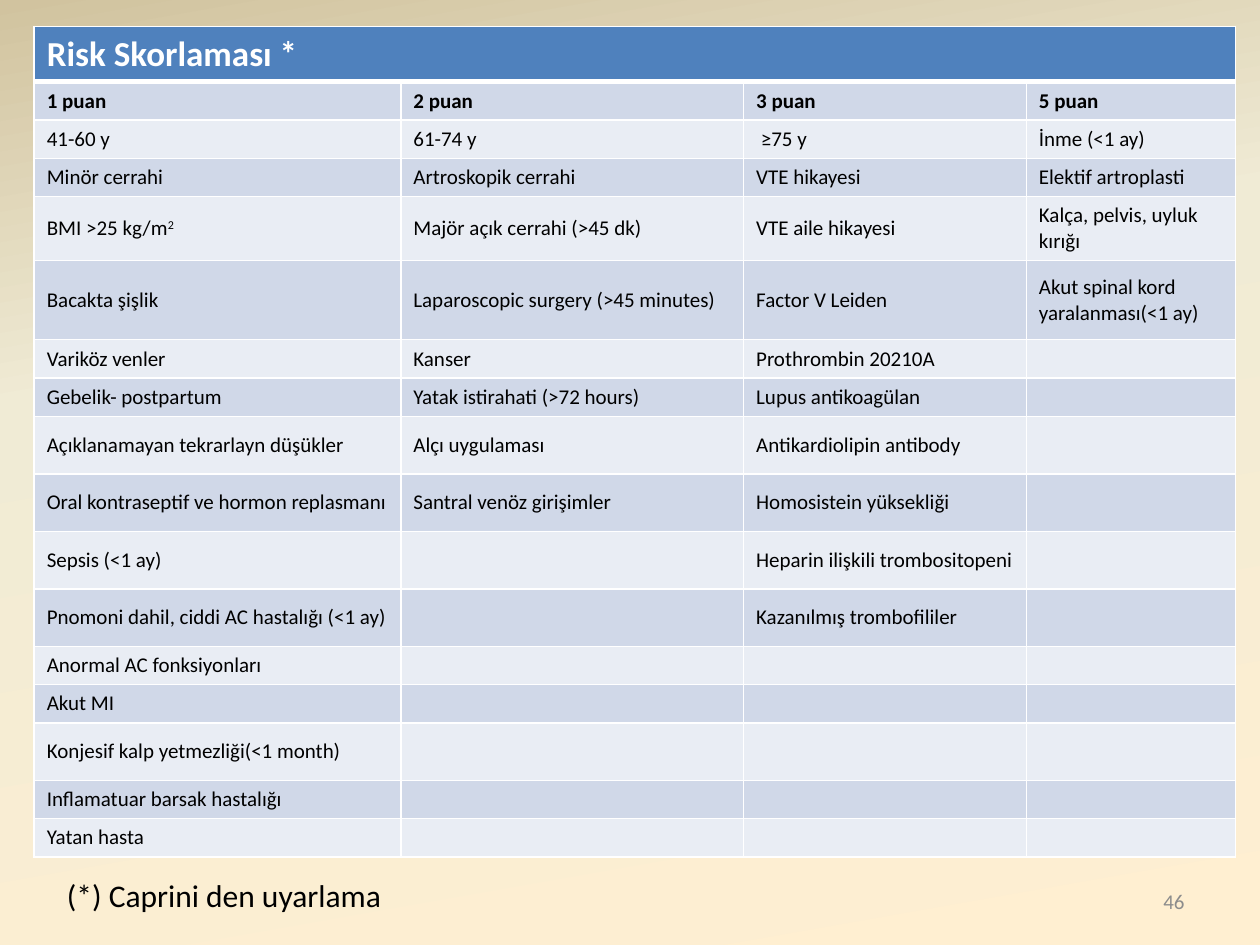
from copy import deepcopy

from lxml.etree import SubElement
from pptx import Presentation
from pptx.dml.color import RGBColor
from pptx.enum.text import MSO_ANCHOR as Anchor, PP_ALIGN as Align
from pptx.oxml.ns import qn
from pptx.util import Cm, Pt

FONT = "Calibri"
WHITE = RGBColor(0xFF, 0xFF, 0xFF)
BLACK = RGBColor(0, 0, 0)
GREY = RGBColor(0x8C, 0x8C, 0x8C)
HEADER_BLUE = RGBColor(0x4F, 0x81, 0xBD)
BANDS = (RGBColor(0xD0, 0xD8, 0xE8), RGBColor(0xE9, 0xED, 0xF4))
SAND = (
    (0, RGBColor(0xFF, 0xEF, 0xD1)),
    (0.65, RGBColor(0xF0, 0xEB, 0xD5)),
    (1, RGBColor(0xD1, 0xC3, 0x9F)),
)

TITLE = "Risk Skorlaması *"
COLUMN_WIDTHS = (7.39, 6.91, 5.7, 4.22)
LOW, MIDDLE, TALL = 0.71, 1.16, 1.6
# Row height in cm, then the cells that hold text; "^" starts a superscript.
ROWS = (
    (LOW, "1 puan", "2 puan", "3 puan", "5 puan"),
    (LOW, "41-60 y", "61-74 y", " ≥75 y", "İnme (<1 ay)"),
    (LOW, "Minör cerrahi", "Artroskopik cerrahi", "VTE hikayesi",
     "Elektif artroplasti"),
    (MIDDLE, "BMI >25 kg/m^2", "Majör açık cerrahi (>45 dk)",
     "VTE aile hikayesi", "Kalça, pelvis, uyluk kırığı"),
    (TALL, "Bacakta şişlik", "Laparoscopic surgery (>45 minutes)",
     "Factor V Leiden", "Akut spinal kord yaralanması(<1 ay)"),
    (LOW, "Variköz venler", "Kanser", "Prothrombin 20210A"),
    (LOW, "Gebelik- postpartum", "Yatak istirahati (>72 hours)",
     "Lupus antikoagülan"),
    (MIDDLE, "Açıklanamayan tekrarlayn düşükler", "Alçı uygulaması",
     "Antikardiolipin antibody"),
    (MIDDLE, "Oral kontraseptif ve hormon replasmanı",
     "Santral venöz girişimler", "Homosistein yüksekliği"),
    (MIDDLE, "Sepsis (<1 ay)", "", "Heparin ilişkili trombositopeni"),
    (MIDDLE, "Pnomoni dahil, ciddi AC hastalığı (<1 ay)", "",
     "Kazanılmış trombofililer"),
    (LOW, "Anormal AC fonksiyonları"),
    (LOW, "Akut MI"),
    (MIDDLE, "Konjesif kalp yetmezliği(<1 month)"),
    (LOW, "Inflamatuar barsak hastalığı"),
    (LOW, "Yatan hasta"),
)


def paint_background(page):
    fill = page.background.fill
    fill.gradient()
    fill.gradient_angle = 100
    stop_list = page.background._cSld.find(".//" + qn("a:gsLst"))
    stop_list.append(deepcopy(stop_list[0]))
    for stop, (position, color) in zip(fill.gradient_stops, SAND):
        stop.position = position
        stop.color.rgb = color


def add_span(para, text, size, color, bold=False):
    span = para.add_run()
    span.text = text
    font = span.font
    font.name, font.size, font.bold = FONT, Pt(size), bold
    font.color.rgb = color
    return span


def add_border(cell, side, width):
    line = SubElement(cell._tc.get_or_add_tcPr(), qn("a:ln" + side),
                      w=str(Pt(width)))
    color = SubElement(SubElement(line, qn("a:solidFill")), qn("a:srgbClr"))
    color.set("val", str(WHITE))


def style_cell(cell, fill_color, top=1, bottom=1):
    for side, width in zip("LRTB", (1, 1, top, bottom)):
        add_border(cell, side, width)
    cell.fill.solid()
    cell.fill.fore_color.rgb = fill_color
    cell.vertical_anchor = Anchor.MIDDLE


def write_cell(cell, text, bold):
    para = cell.text_frame.paragraphs[0]
    base, _, raised = text.partition("^")
    if base:
        add_span(para, base, 12, BLACK, bold)
    else:
        # An empty cell keeps the small size, so that its row stays low.
        SubElement(para._p, qn("a:endParaRPr"), sz="1200")
    if raised:
        span = add_span(para, raised, 12, BLACK, bold)
        span.font._element.set("baseline", "30000")


def add_risk_table(page):
    count = len(COLUMN_WIDTHS)
    frame = page.shapes.add_table(len(ROWS) + 1, count, Cm(0.69), Cm(0.53),
                                  Cm(sum(COLUMN_WIDTHS)), Cm(16.6))
    table = frame.table
    for column, width in zip(table.columns, COLUMN_WIDTHS):
        column.width = Cm(width)

    table.rows[0].height = Cm(LOW)
    for cell in table.rows[0].cells:
        style_cell(cell, HEADER_BLUE, bottom=3)
    title = table.cell(0, 0)
    title.merge(table.cell(0, count - 1))
    add_span(title.text_frame.paragraphs[0], TITLE, 20, WHITE, True)

    for index, (height, *texts) in enumerate(ROWS):
        row = table.rows[index + 1]
        row.height = Cm(height)
        texts += [""] * (count - len(texts))
        for cell, text in zip(row.cells, texts):
            style_cell(cell, BANDS[index % 2], top=3 if index == 0 else 1)
            write_cell(cell, text, bold=index == 0)


def add_label(page, text, place, size, color, wrap=True,
              align=Align.LEFT, anchor=Anchor.TOP):
    box = page.shapes.add_textbox(*(Cm(length) for length in place))
    frame = box.text_frame
    frame.word_wrap = wrap
    frame.vertical_anchor = anchor
    para = frame.paragraphs[0]
    para.alignment = align
    add_span(para, text, size, color)


def main():
    deck = Presentation()
    deck.slide_width, deck.slide_height = Cm(25.4), Cm(19.05)
    page = deck.slides.add_slide(deck.slide_layouts[6])
    paint_background(page)
    add_risk_table(page)
    add_label(page, "46", (18.2, 17.66, 5.93, 1.01), 12, GREY,
              align=Align.RIGHT, anchor=Anchor.MIDDLE)
    add_label(page, "(*) Caprini den uyarlama", (1.1, 17.53, 6.9, 1.03), 18,
              BLACK, wrap=False)
    deck.save("out.pptx")


if __name__ == "__main__":
    main()
